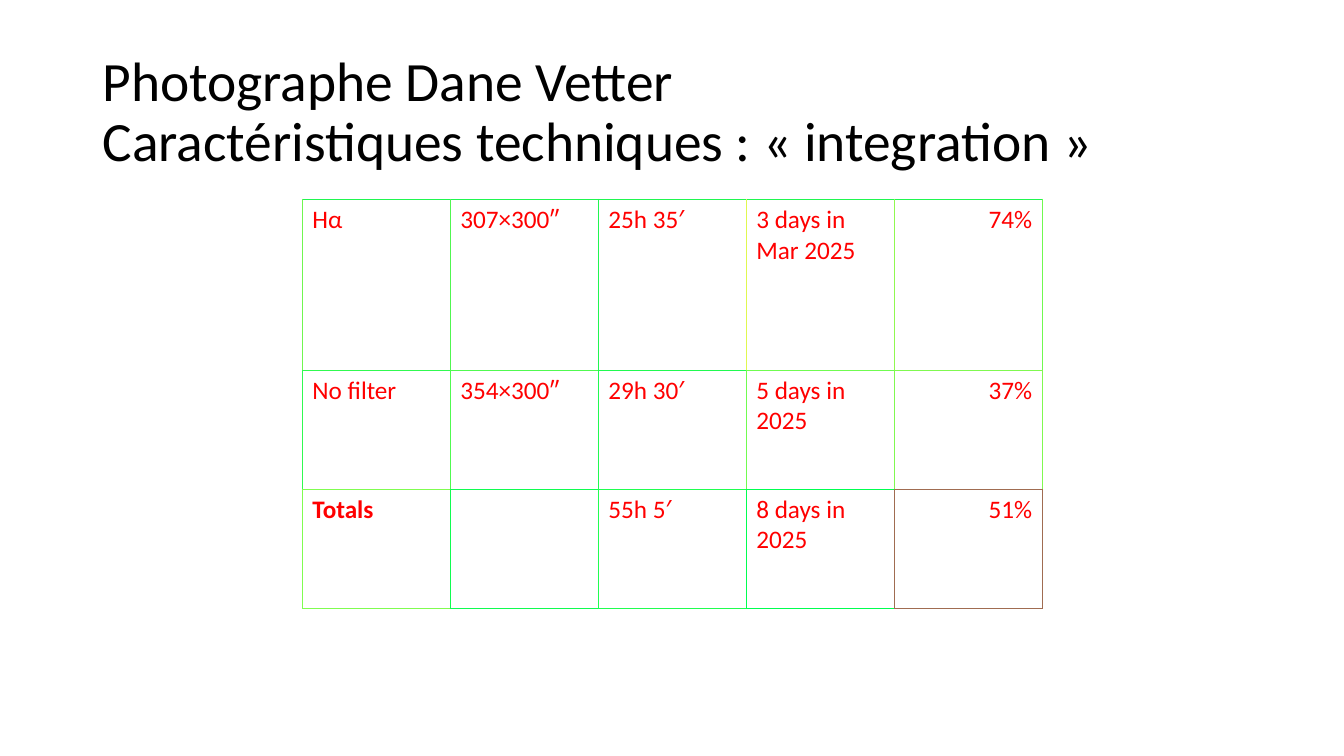
from pptx import Presentation
from pptx.dml.color import RGBColor
from pptx.enum.text import MSO_ANCHOR, MSO_AUTO_SIZE, PP_ALIGN
from pptx.oxml.ns import qn
from pptx.util import Pt
from lxml import etree

LEFT, RIGHT = PP_ALIGN.LEFT, PP_ALIGN.RIGHT
MIDDLE, NO_FIT = MSO_ANCHOR.MIDDLE, MSO_AUTO_SIZE.NONE


def style(font, size, color, bold=False):
    font.name, font.size, font.bold = "Calibri", Pt(size), bold
    font.color.rgb = RGBColor.from_string(color)


def add_border(cell, side, color, width):
    ln = etree.SubElement(cell._tc.get_or_add_tcPr(), qn("a:ln" + side), w=str(Pt(width)))
    fill = etree.SubElement(ln, qn("a:solidFill"))
    etree.SubElement(fill, qn("a:srgbClr"), val=color)


prs = Presentation()
prs.slide_width, prs.slide_height = Pt(960), Pt(540)
s = prs.slides.add_slide(prs.slide_layouts[5])

# Title
title = s.shapes.title
title.left, title.top, title.width, title.height = Pt(66), Pt(28.75), Pt(828), Pt(104.4)
tf = title.text_frame
tf.word_wrap, tf.auto_size, tf.vertical_anchor = True, NO_FIT, MIDDLE
tf.text = "Photographe Dane Vetter\vCaractéristiques techniques : « integration »"
p = tf.paragraphs[0]
p.alignment, p.line_spacing = LEFT, 0.9
for r in p.runs:
    style(r.font, 39.6, "000000")

# Integration table
rows = [
    ["Hα", "307×300″", "25h 35′", "3 days in Mar 2025", "74%"],
    ["No filter", "354×300″", "29h 30′", "5 days in 2025", "37%"],
    ["Totals", "", "55h 5′", "8 days in 2025", "51%"],
]
row_heights = [121.9, 85, 85]
col_width = 105.7
table = s.shapes.add_table(3, 5, Pt(216), Pt(142.5), Pt(5 * col_width),
                           Pt(sum(row_heights))).table
table.first_row = table.horz_banding = False
for col in table.columns:
    col.width = Pt(col_width)
for row, height in zip(table.rows, row_heights):
    row.height = Pt(height)

# Vertical lines of each row and horizontal lines of each level, left to right
verticals = [
    ["70F650", "50F650", "20F650", "E0F850", "90F950", "70F950"],
    ["30FA50", "50FA50", "20FA50", "70FC50", "80F950", "80F950"],
    ["80FD50", "10FC50", "20FE50", "00FF50", "A06C51", "A06C51"],
]
horizontals = [["20F650"] * 5, verticals[1], verticals[2], verticals[2]]

for i, texts in enumerate(rows):
    for j, text in enumerate(texts):
        cell = table.cell(i, j)
        add_border(cell, "L", verticals[i][j], 1)
        add_border(cell, "R", verticals[i][j + 1], 1)
        add_border(cell, "T", horizontals[i][j], 1)
        add_border(cell, "B", horizontals[i + 1][j], 0.75 if i == 2 else 1)
        cell.fill.background()
        cell.text_frame.text = text
        p = cell.text_frame.paragraphs[0]
        p.alignment = RIGHT if j == 4 else LEFT
        for r in p.runs:
            style(r.font, 18, "FF0000", text == "Totals")

prs.save("out.pptx")
